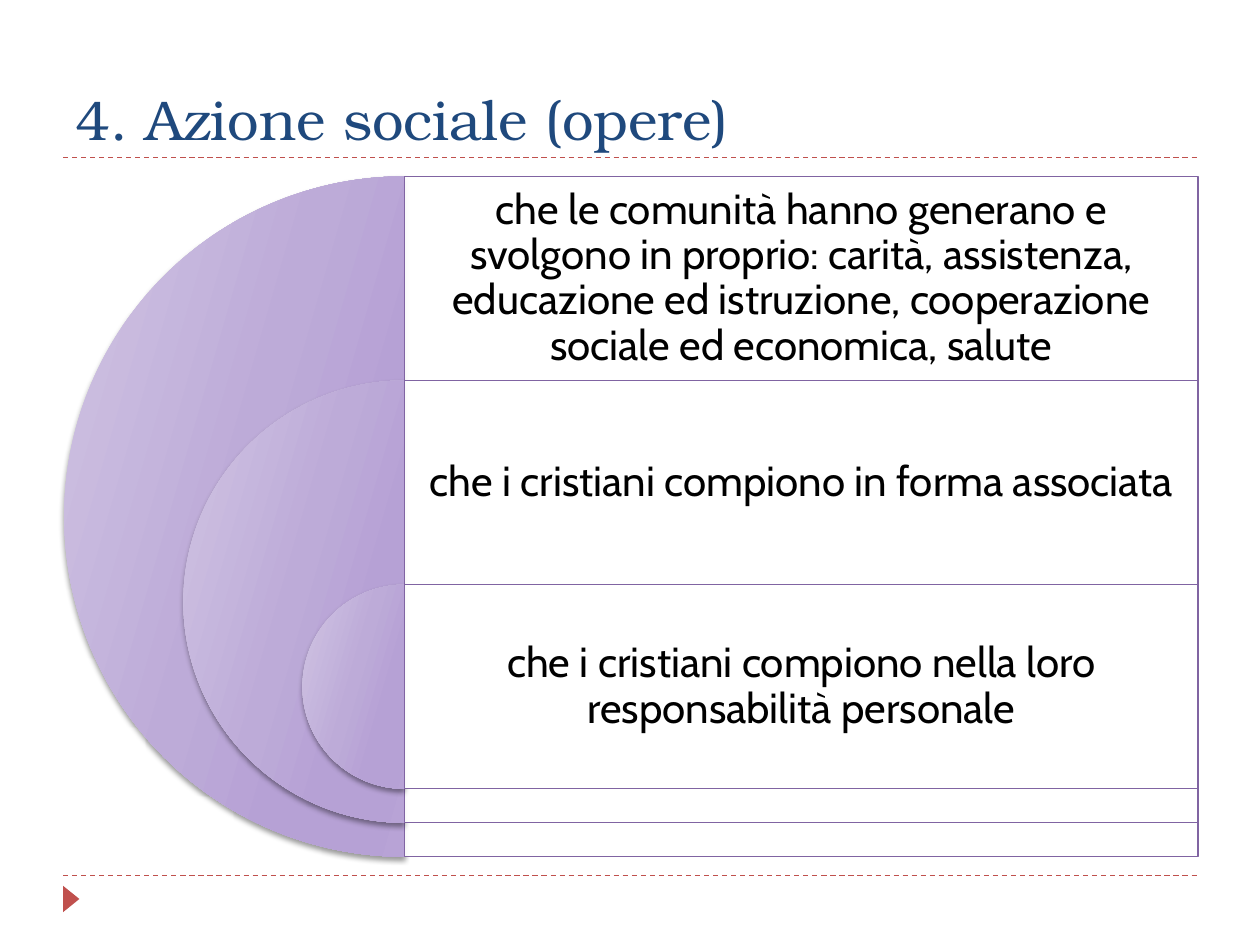
from dataclasses import dataclass
from typing import Any

from lxml import etree
from pptx import Presentation, util as u
from pptx.dml.color import RGBColor
from pptx.enum import dml, shapes, text
from pptx.oxml.ns import qn

COLS, ROWS = 100, 75
CELL = u.Inches(0.1)


@dataclass(frozen=True)
class Theme:
    red: str = "C0504D"
    blue: str = "1F497D"
    edge: str = "8064A2"
    ink: str = "000000"
    paper: str = "FFFFFF"
    blend: tuple = ((0, "D1C5E3"), (30, "BDABD8"), (45, "B6A1D5"),
                    (55, "B6A1D5"), (73, "BDABD8"), (100, "D1C5E3"))
    head: str = "TeX Gyre Bonum"
    body: str = "Cabin"
    large: int = 32
    small: int = 24
    thin: float = 0.75


@dataclass(frozen=True)
class Box:
    col: float
    row: float
    wide: float
    tall: float

    def place(self) -> tuple:
        return tuple(grid(n) for n in (self.col, self.row, self.wide, self.tall))


@dataclass(frozen=True)
class Ring:
    share: float
    label: str


THEME = Theme()
DISC = Box(5.1, 14, 54, 54)
MID = DISC.col + DISC.wide / 2
BAND = 0.3 * DISC.tall
PANEL = 63
RINGS = (
    Ring(1, "che le comunità hanno generano e svolgono in proprio: carità, assistenza, "
            "educazione ed istruzione, cooperazione sociale ed economica, salute"),
    Ring(0.65, "che i cristiani compiono in forma associata"),
    Ring(0.3, "che i cristiani compiono nella loro responsabilità personale"),
)


def grid(count: float) -> int:
    return round(count * CELL)


def apply(item: Any, style: dict) -> None:
    for name, value in style.items():
        setattr(item, name, value)


def node(root: Any, tag: str, **attrs: Any) -> Any:
    return etree.SubElement(root, qn(f"a:{tag}"), {k: str(v) for k, v in attrs.items()})


def tint(root: Any, color: str, alpha: int) -> None:
    node(node(root, "srgbClr", val=color), "alpha", val=alpha * 1000)


def rule(slide: Any, row: float) -> None:
    line = slide.shapes.add_connector(
        shapes.MSO_CONNECTOR.STRAIGHT, grid(5), grid(row), grid(COLS - 5), grid(row))
    line.line.color.rgb = RGBColor.from_string(THEME.red)
    apply(line.line, {"width": u.Pt(THEME.thin), "dash_style": dml.MSO_LINE.DASH})
    node(line.element.spPr, "effectLst")


def form(slide: Any, kind: Any, box: Box) -> Any:
    shape = slide.shapes.add_shape(kind, *box.place())
    shape.shadow.inherit = False
    shape.line.fill.background()
    return shape


def mark(slide: Any) -> None:
    shape = form(slide, shapes.MSO_SHAPE.ISOSCELES_TRIANGLE, Box(4.6, 70.7, 2.1, 1.3))
    shape.rotation = 90
    shape.fill.solid()
    shape.fill.fore_color.rgb = RGBColor.from_string(THEME.red)


def half(slide: Any, box: Box) -> None:
    shape = form(slide, shapes.MSO_SHAPE.PIE, box)
    shape.adjustments[0], shape.adjustments[1] = 54, 162
    shape.fill.gradient()
    props = shape.element.spPr
    stops = props.find(".//" + qn("a:gsLst"))
    for stop in list(stops):
        stops.remove(stop)
    for share, color in THEME.blend:
        node(node(stops, "gs", pos=share * 1000), "srgbClr", val=color)
    props.find(".//" + qn("a:lin")).set("ang", str(16 * 60000))
    cast = node(props.find(qn("a:effectLst")), "outerShdw", blurRad=u.Pt(3),
                dist=u.Pt(2), dir=90 * 60000, rotWithShape=0)
    tint(cast, THEME.ink, 40)


def panel(slide: Any, box: Box) -> None:
    shape = form(slide, shapes.MSO_SHAPE.RECTANGLE, box)
    shape.fill.solid()
    shape.fill.fore_color.rgb = RGBColor.from_string(THEME.paper)
    color = shape.element.spPr.find(qn("a:solidFill")).find(qn("a:srgbClr"))
    node(color, "alpha", val=90000)
    shape.line.color.rgb = RGBColor.from_string(THEME.edge)
    shape.line.width = u.Pt(THEME.thin)


def write(slide: Any, box: Box, words: str, frame: dict, para: dict,
          font: dict, color: str) -> None:
    body = slide.shapes.add_textbox(*box.place()).text_frame
    apply(body, {"word_wrap": True, **frame})
    line = body.paragraphs[0]
    apply(line, para)
    run = line.add_run()
    run.text = words
    apply(run.font, font)
    run.font.color.rgb = RGBColor.from_string(color)


def ring(slide: Any, index: int, item: Ring) -> None:
    size = item.share * DISC.tall
    top = DISC.row + index * BAND
    half(slide, Box(MID - size / 2, top, size, size))
    panel(slide, Box(MID, top, PANEL, size))
    pad = grid(1)
    write(slide, Box(MID, top, PANEL, BAND), item.label,
          {"vertical_anchor": text.MSO_ANCHOR.MIDDLE, "margin_left": pad,
           "margin_right": pad, "margin_top": pad, "margin_bottom": pad},
          {"alignment": text.PP_ALIGN.CENTER, "line_spacing": 0.9,
           "space_after": u.Pt(0.35 * THEME.small)},
          {"name": THEME.body, "size": u.Pt(THEME.small)}, THEME.ink)


def main() -> None:
    deck = Presentation()
    apply(deck, {"slide_width": grid(COLS), "slide_height": grid(ROWS)})
    slide = deck.slides.add_slide(deck.slide_layouts[6])
    for row in (69.5, 12.5):
        rule(slide, row)
    mark(slide)
    write(slide, Box(5, 1.7, 90, 10.8), "4. Azione sociale (opere)",
          {"vertical_anchor": text.MSO_ANCHOR.BOTTOM}, {},
          {"name": THEME.head, "size": u.Pt(THEME.large)}, THEME.blue)
    for index, item in enumerate(RINGS):
        ring(slide, index, item)
    deck.save("out.pptx")


if __name__ == "__main__":
    main()
